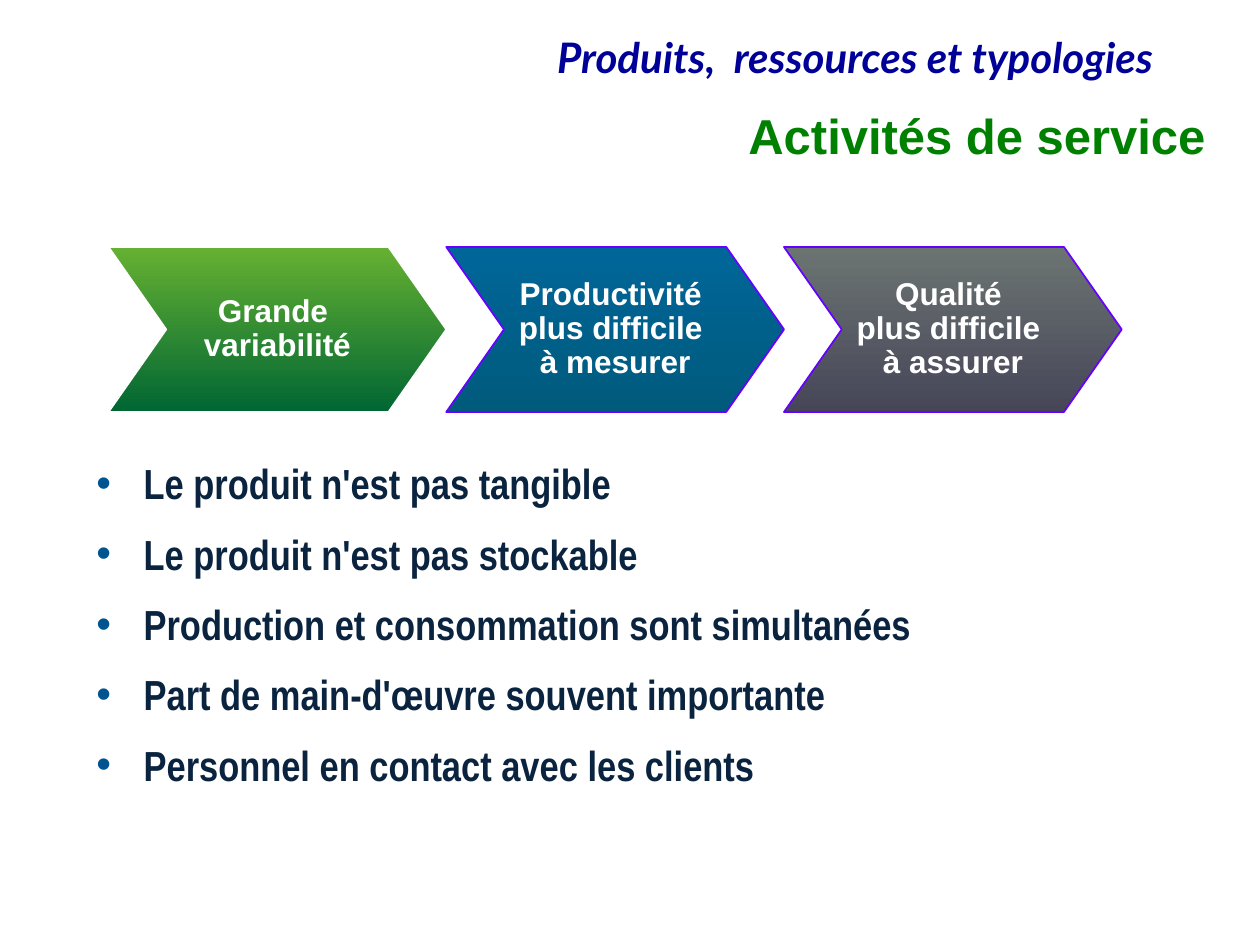
from dataclasses import dataclass

from lxml import etree
from pptx import Presentation
from pptx.dml.color import RGBColor
from pptx.enum.shapes import MSO_SHAPE
from pptx.enum.text import MSO_ANCHOR, MSO_AUTO_SIZE, PP_ALIGN
from pptx.oxml.ns import qn
from pptx.util import Pt

CHEVRON = MSO_SHAPE.CHEVRON
TOP, MIDDLE = MSO_ANCHOR.TOP, MSO_ANCHOR.MIDDLE
LEFT, CENTER, RIGHT = PP_ALIGN.LEFT, PP_ALIGN.CENTER, PP_ALIGN.RIGHT
FIXED = MSO_AUTO_SIZE.NONE

HEADER = "Produits,  ressources et typologies"
TITLE = "Activités de service"
STEPS = [
    ("Grande \nvariabilité", "66B132", "006633", "FFFFFF"),
    ("Productivité \nplus difficile \nà mesurer", "006699", "005A7C", "6600FF"),
    ("Qualité \nplus difficile \nà assurer", "6C7472", "464658", "6600FF"),
]
POINTS = [
    "Le produit n'est pas tangible",
    "Le produit n'est pas stockable",
    "Production et consommation sont simultanées",
    "Part de main-d'œuvre souvent importante",
    "Personnel en contact avec les clients",
]


@dataclass(frozen=True)
class Style:
    font: str
    size: float
    color: str
    align: int
    space: object
    italic: bool = False


THEME = {
    "header": Style("Lato", 24, "000099", RIGHT, 0.9, True),
    "title": Style("Arial", 28, "008000", RIGHT, Pt(45.8)),
    "step": Style("Arial", 18, "FFFFFF", CENTER, 0.9),
    "point": Style("Arial Narrow", 24, "0A233F", LEFT, 1.1),
    "bullet": "005490",
}


def rgb(code):
    return RGBColor.from_string(code)


def place(shape, left, top, width, height):
    shape.left, shape.top = Pt(left), Pt(top)
    shape.width, shape.height = Pt(width), Pt(height)


def write(shape, text, style, anchor=MIDDLE, inset=(7.2, 3.6)):
    frame = shape.text_frame
    frame.text = text
    frame.word_wrap = True
    frame.auto_size = FIXED
    frame.vertical_anchor = anchor
    frame.margin_left = frame.margin_right = Pt(inset[0])
    frame.margin_top = frame.margin_bottom = Pt(inset[1])
    for para in frame.paragraphs:
        para.alignment = style.align
        para.line_spacing = style.space
        for run in para.runs:
            font = run.font
            font.name, font.size = style.font, Pt(style.size)
            font.bold, font.italic = True, style.italic
            font.color.rgb = rgb(style.color)


def bullet(para):
    para.space_before = Pt(8.5)
    props = para._p.get_or_add_pPr()
    props.set("marL", str(Pt(27)))
    props.set("indent", str(-Pt(27)))
    color = etree.SubElement(props, qn("a:buClr"))
    etree.SubElement(color, qn("a:srgbClr"), val=THEME["bullet"])
    etree.SubElement(props, qn("a:buFont"), typeface="Arial")
    etree.SubElement(props, qn("a:buChar"), char="•")


def add_step(slide, index, text, start, end, edge):
    width = 193
    box = (62 + index * width, 141.1, width, 94.3)
    step = slide.shapes.add_shape(CHEVRON, *map(Pt, box))
    step.adjustments[0] = 0.35
    step.shadow.inherit = False
    step.fill.gradient()
    step.fill.gradient_angle = 270
    for stop, code in zip(step.fill.gradient_stops, (start, end)):
        stop.color.rgb = rgb(code)
    step.line.color.rgb = rgb(edge)
    step.line.width = Pt(1)
    write(step, text, THEME["step"], inset=(0, 0))


def main():
    deck = Presentation()
    deck.slide_width, deck.slide_height = Pt(720), Pt(540)
    slide = deck.slides.add_slide(deck.slide_layouts[5])

    head = slide.shapes.add_textbox(Pt(90), Pt(18), Pt(576), Pt(67))
    write(head, HEADER, THEME["header"], TOP)

    title = slide.shapes.title
    place(title, 48, 37.4, 648, 67.7)
    write(title, TITLE, THEME["title"])

    body = slide.shapes.add_textbox(Pt(48), Pt(236), Pt(636), Pt(238))
    write(body, "\n".join(POINTS), THEME["point"])
    for para in body.text_frame.paragraphs:
        bullet(para)

    for index, step in enumerate(STEPS):
        add_step(slide, index, *step)

    deck.save("out.pptx")


if __name__ == "__main__":
    main()
